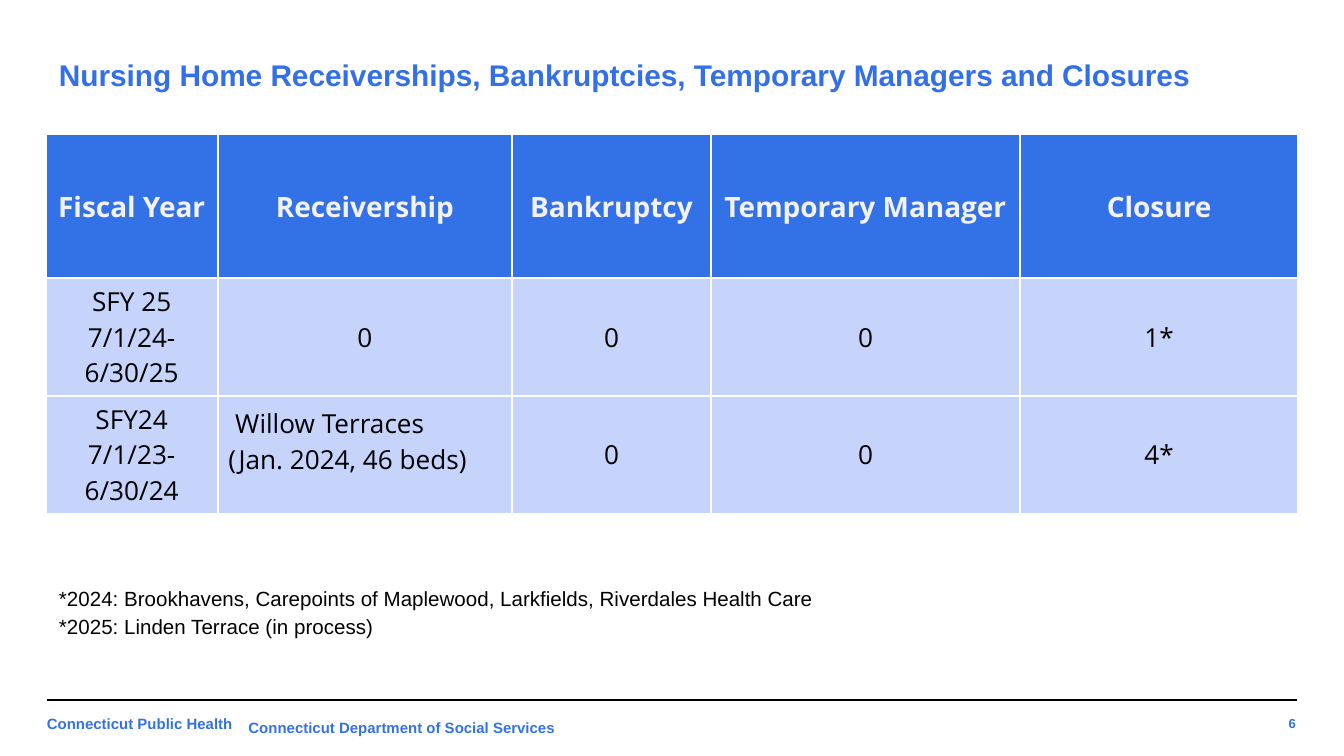
from dataclasses import dataclass

import lxml.etree
import pptx
import pptx.dml.color
import pptx.enum.shapes
import pptx.enum.text
import pptx.oxml.ns
import pptx.util

Inches = pptx.util.Inches
Pt = pptx.util.Pt
RGBColor = pptx.dml.color.RGBColor
Align = pptx.enum.text.PP_ALIGN
Anchor = pptx.enum.text.MSO_ANCHOR
qn = pptx.oxml.ns.qn

BLUE = RGBColor(0x33, 0x71, 0xE7)
TITLE = RGBColor(0x33, 0x70, 0xE8)
PALE = RGBColor(0xC6, 0xD4, 0xFB)
LIGHT = RGBColor(0xF2, 0xF2, 0xF2)
WHITE = RGBColor(0xFF, 0xFF, 0xFF)
BLACK = RGBColor(0, 0, 0)


@dataclass
class Style:
    font: str
    size: float
    color: RGBColor
    bold: bool = False
    align: Align = Align.LEFT
    space: float = 1.0


@dataclass
class Label:
    text: str
    left: float
    top: float
    width: float
    height: float
    style: Style
    anchor: Anchor = Anchor.TOP
    inset: float = 0.1
    wrap: bool = True


FOOT = Style("Arial", 8, BLUE, True)
HEAD = Style("Open Sans", 15, LIGHT, True, Align.CENTER)
BODY = Style("Open Sans", 14, BLACK, False, Align.CENTER)
HOME = Style("Open Sans", 14, BLACK)

LABELS = [
    Label("Nursing Home Receiverships, Bankruptcies, Temporary Managers and Closures",
          0.34, 0.25, 9.32, 0.61, Style("Arial", 16, TITLE, True), Anchor.MIDDLE),
    Label("*2024: Brookhavens, Carepoints of Maplewood, Larkfields, Riverdales Health Care\n"
          "*2025: Linden Terrace (in process)",
          0.34, 4.23, 9.32, 0.7, Style("Arial", 11, BLACK, space=1.15)),
    Label("Connecticut Public Health", 0.25, 5.25, 3.28, 0.34, FOOT),
    Label("Connecticut Department of Social Services",
          1.75, 5.3, 2.51, 0.24, FOOT, inset=0.05, wrap=False),
    Label("6", 9.14, 5.26, 0.6, 0.25, Style("Arial", 7, BLUE, True, Align.RIGHT),
          Anchor.MIDDLE),
]

WIDTHS = [1.28, 2.19, 1.48, 2.3, 2.07]
HEIGHTS = [1.07, 0.87, 0.87]
ROWS = [
    ["Fiscal Year", "Receivership", "Bankruptcy", "Temporary Manager", "Closure"],
    ["SFY 25\n7/1/24-6/30/25", "0", "0", "0", "1*"],
    ["SFY24\n7/1/23-6/30/24", " Willow Terraces\n(Jan. 2024, 46 beds)", "0", "0", "4*"],
]


def write(frame, text: str, style: Style) -> None:
    frame.text = text
    for para in frame.paragraphs:
        para.alignment = style.align
        para.line_spacing = style.space
        for run in para.runs:
            run.font.name = style.font
            run.font.size = Pt(style.size)
            run.font.bold = style.bold
            run.font.color.rgb = style.color


def draw_label(slide, label: Label) -> None:
    box = slide.shapes.add_textbox(Inches(label.left), Inches(label.top),
                                   Inches(label.width), Inches(label.height))
    frame = box.text_frame
    frame.word_wrap = label.wrap
    frame.vertical_anchor = label.anchor
    frame.margin_left = frame.margin_right = Inches(0.1)
    frame.margin_top = frame.margin_bottom = Inches(label.inset)
    write(frame, label.text, label.style)


def draw_edges(cell) -> None:
    props = cell._tc.get_or_add_tcPr()
    for side in ("a:lnL", "a:lnR", "a:lnT", "a:lnB"):
        edge = lxml.etree.SubElement(props, qn(side), w=str(Pt(1)))
        fill = lxml.etree.SubElement(edge, qn("a:solidFill"))
        lxml.etree.SubElement(fill, qn("a:srgbClr"), val=str(WHITE))


def draw_cell(cell, text: str, style: Style, fill: RGBColor) -> None:
    draw_edges(cell)
    cell.fill.solid()
    cell.fill.fore_color.rgb = fill
    cell.vertical_anchor = Anchor.MIDDLE
    cell.margin_left = cell.margin_right = Inches(0.08)
    cell.margin_top = cell.margin_bottom = Inches(0.04)
    write(cell.text_frame, text, style)


def draw_table(slide) -> None:
    table = slide.shapes.add_table(len(ROWS), len(WIDTHS), Inches(0.34), Inches(1),
                                   Inches(sum(WIDTHS)), Inches(sum(HEIGHTS))).table
    for col, width in zip(table.columns, WIDTHS):
        col.width = Inches(width)
    for row, height in zip(table.rows, HEIGHTS):
        row.height = Inches(height)
    for r, texts in enumerate(ROWS):
        style, fill = (BODY, PALE) if r else (HEAD, BLUE)
        for c, text in enumerate(texts):
            draw_cell(table.cell(r, c), text, style, fill)
    home = table.cell(2, 1)
    home.margin_bottom = Inches(0.24)
    write(home.text_frame, ROWS[2][1], HOME)


def draw_rule(slide) -> None:
    rule = slide.shapes.add_connector(pptx.enum.shapes.MSO_CONNECTOR.STRAIGHT,
                                      Inches(9.65), Inches(5.21),
                                      Inches(0.35), Inches(5.21))
    rule.line.color.rgb = BLACK
    rule.line.width = Pt(0.75)
    lxml.etree.SubElement(rule._element.spPr, qn("a:effectLst"))


def main() -> None:
    deck = pptx.Presentation()
    deck.slide_width = Inches(10)
    deck.slide_height = deck.slide_width * 9 // 16
    slide = deck.slides.add_slide(deck.slide_layouts[6])
    draw_rule(slide)
    draw_table(slide)
    for label in LABELS:
        draw_label(slide, label)
    deck.save("out.pptx")


if __name__ == "__main__":
    main()
